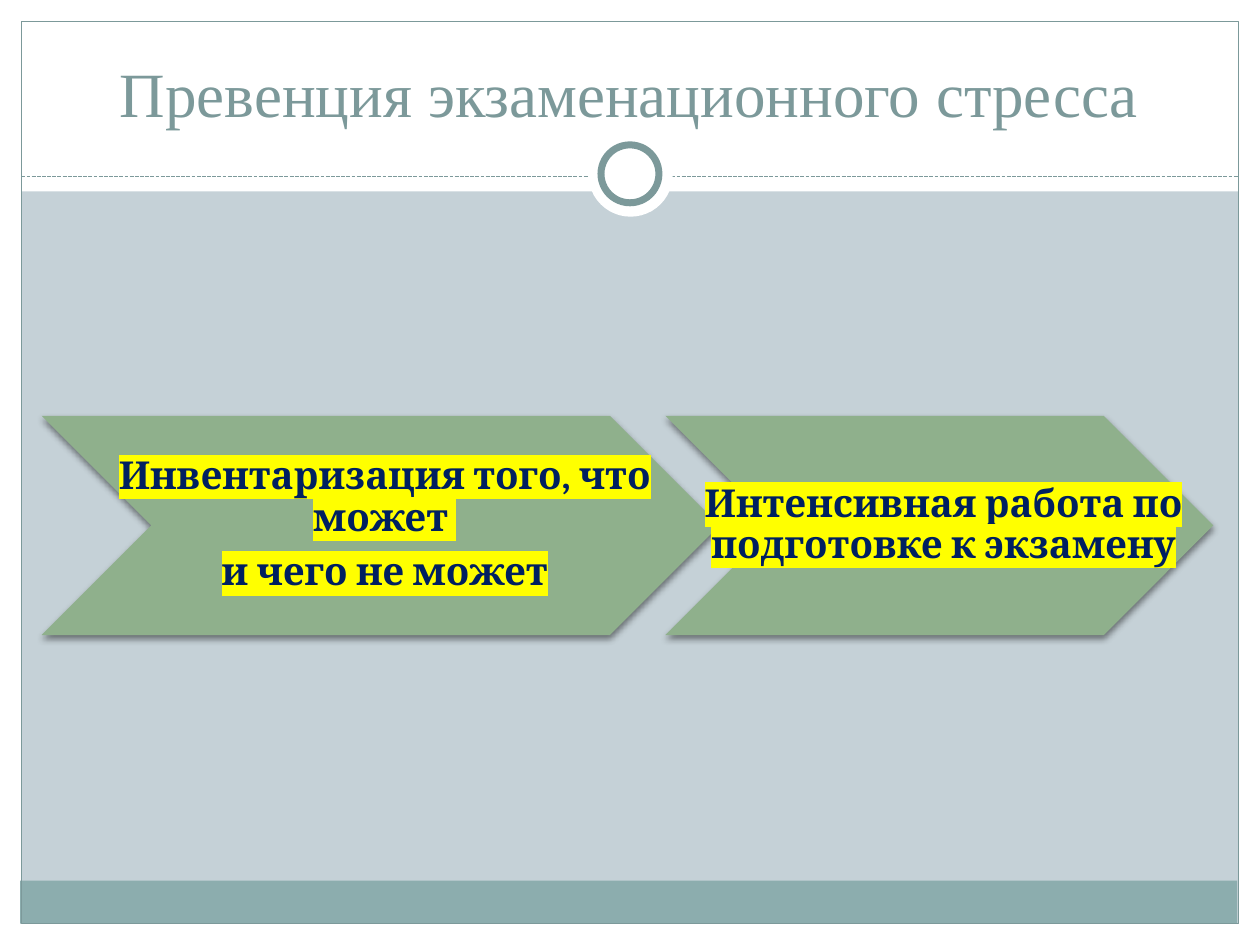
import lxml.etree
import pptx
import pptx.dml.color
import pptx.enum.dml
import pptx.enum.shapes
import pptx.enum.text
import pptx.oxml
import pptx.oxml.ns
import pptx.util

Inches = pptx.util.Inches
Pt = pptx.util.Pt
KIND = pptx.enum.shapes.MSO_SHAPE
ANCHOR = pptx.enum.text.MSO_ANCHOR
WHITE, TEAL, GREEN = "FFFFFF", "7C999A", "8FB08C"


def color(value):
    """Turn a hex string into a colour."""
    return pptx.dml.color.RGBColor.from_string(value)


def shape(slide, kind, box, fill=None, line=None, width=0.75):
    """Add a preset shape with a plain fill and line."""
    item = slide.shapes.add_shape(kind, *map(Inches, box))
    item.shadow.inherit = False
    if fill:
        item.fill.solid()
        item.fill.fore_color.rgb = color(fill)
    else:
        item.fill.background()
    if line:
        item.line.color.rgb = color(line)
        item.line.width = Pt(width)
    else:
        item.line.fill.background()
    return item


def shade(item):
    """Give a shape a soft shadow that falls straight down."""
    effects = item._element.spPr.find(pptx.oxml.ns.qn("a:effectLst"))
    effects.append(pptx.oxml.parse_xml(
        f'<a:outerShdw {pptx.oxml.ns.nsdecls("a")} blurRad="{Pt(4)}" '
        f'dist="{Pt(2)}" dir="5400000" algn="ctr" rotWithShape="0">'
        '<a:srgbClr val="000000"><a:alpha val="45000"/></a:srgbClr>'
        '</a:outerShdw>'))


def mark(run, value):
    """Highlight a run."""
    tag = pptx.oxml.ns.qn
    light = lxml.etree.Element(tag("a:highlight"))
    lxml.etree.SubElement(light, tag("a:srgbClr")).set("val", value)
    run.font._element.find(tag("a:solidFill")).addnext(light)


def text(slide, box, lines, *, size, font, ink, bold=False, light=None,
         anchor=ANCHOR.MIDDLE, inset=(0.1, 0.05, 0.1, 0.05),
         lead=1.0, after=0):
    """Add a box of centred paragraphs."""
    frame = slide.shapes.add_textbox(*map(Inches, box)).text_frame
    frame.word_wrap = True
    frame.vertical_anchor = anchor
    (frame.margin_left, frame.margin_top,
     frame.margin_right, frame.margin_bottom) = map(Inches, inset)
    for index, line in enumerate(lines):
        para = frame.add_paragraph() if index else frame.paragraphs[0]
        para.alignment = pptx.enum.text.PP_ALIGN.CENTER
        para.line_spacing = lead
        para.space_after = Pt(after)
        run = para.add_run()
        run.text = line
        run.font.size = Pt(size)
        run.font.name = font
        run.font.bold = bold
        run.font.color.rgb = color(ink)
        if light:
            mark(run, light)


def rule(slide, left, right, top):
    """Add a dashed level line."""
    line = slide.shapes.add_connector(
        pptx.enum.shapes.MSO_CONNECTOR.STRAIGHT,
        Inches(left), Inches(top), Inches(right), Inches(top))
    line.line.color.rgb = color(TEAL)
    line.line.width = Pt(0.75)
    line.line.dash_style = pptx.enum.dml.MSO_LINE.SQUARE_DOT
    lxml.etree.SubElement(line._element.spPr, pptx.oxml.ns.qn("a:effectLst"))


def frame(slide):
    """Draw the white edges, foot bar, border, rule and ring."""
    for box in ((0, 7.33, 10, 0.17), (0, 0, 10, 1.52),
                (0, 0, 0.17, 7.5), (9.83, 0, 0.17, 7.5)):
        shape(slide, KIND.RECTANGLE, box, WHITE)
    shape(slide, KIND.RECTANGLE, (0.16, 6.99, 9.66, 0.34), "8CADAE")
    shape(slide, KIND.RECTANGLE, (0.17, 0.17, 9.66, 7.16), line=TEAL)
    rule(slide, 0.17, 9.83, 1.4)
    shape(slide, KIND.OVAL, (4.67, 1.05, 0.67, 0.67), WHITE)
    shape(slide, KIND.OVAL, (4.77, 1.15, 0.46, 0.46), WHITE, TEAL, 4)


def step(slide, left, width, lines):
    """Add one chevron with its highlighted words."""
    box = (left, 3.3, width, 1.74)
    shade(shape(slide, KIND.CHEVRON, box, GREEN))
    text(slide, box, lines, size=22, font="Cambria", ink="002060",
         bold=True, light="FFFF00", inset=(0.1, 0.03, 0.03, 0.03),
         lead=0.9, after=7.5)


def main():
    """Build and save the slide."""
    deck = pptx.Presentation()
    deck.slide_width, deck.slide_height = Inches(10), Inches(7.5)
    slide = deck.slides.add_slide(deck.slide_layouts[6])
    slide.background.fill.solid()
    slide.background.fill.fore_color.rgb = color("C5D1D7")
    frame(slide)
    text(slide, (0.33, 0.25, 9.33, 0.83),
         ["Превенция экзаменационного стресса"], size=36,
         font="Times New Roman", ink=TEAL, anchor=ANCHOR.BOTTOM)
    step(slide, 0.33, 5.38,
         ["Инвентаризация того, что может ", "и чего не может"])
    step(slide, 5.28, 4.35,
         ["Интенсивная работа по подготовке к экзамену"])
    deck.save("out.pptx")


if __name__ == "__main__":
    main()
